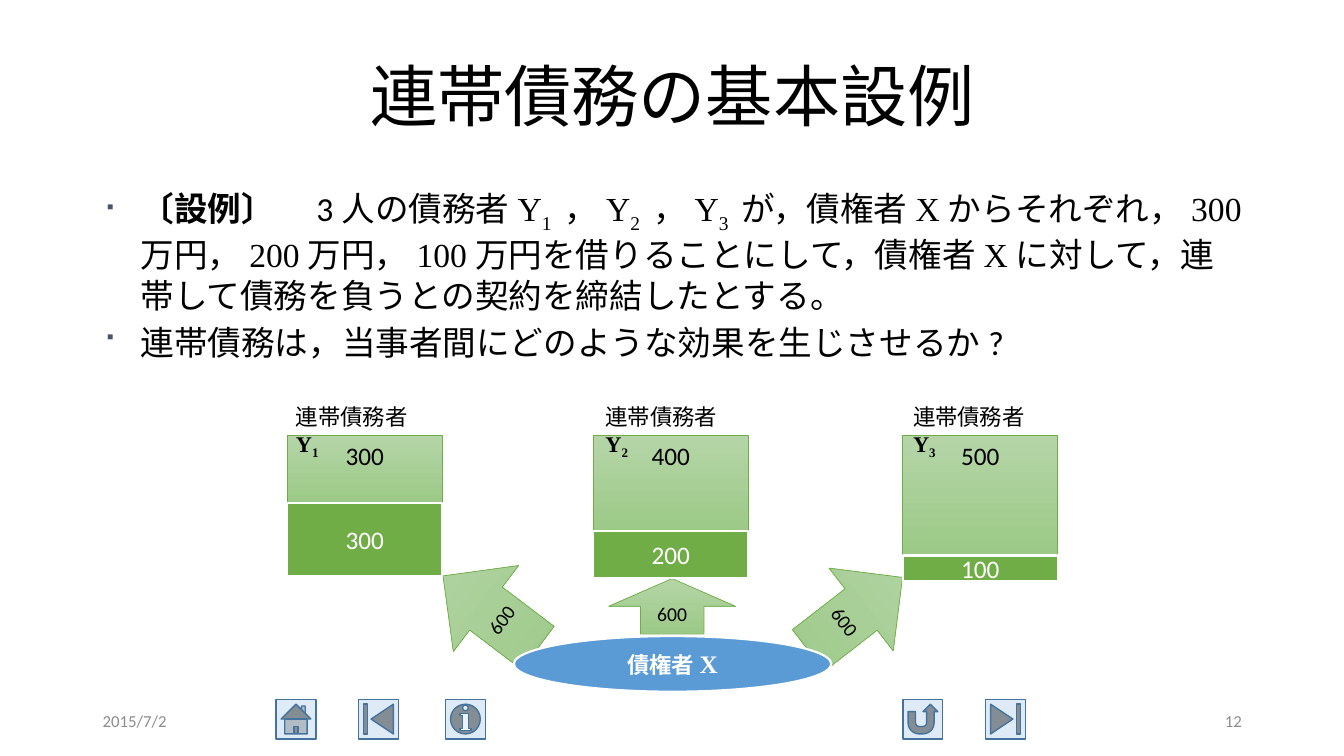
import pptx
import pptx.util
import pptx.dml.color
import pptx.enum.shapes
import pptx.enum.text
import pptx.oxml.ns
from dataclasses import dataclass
from lxml import etree

Cm, Pt = pptx.util.Cm, pptx.util.Pt
KIND = pptx.enum.shapes.MSO_SHAPE
ALIGN = pptx.enum.text.PP_ALIGN
ANCHOR = pptx.enum.text.MSO_ANCHOR
FIT = pptx.enum.text.MSO_AUTO_SIZE


@dataclass(frozen=True)
class Theme:
    sans: str = "Calibri"
    serif: str = "Times New Roman"
    ink: str = "000000"
    white: str = "FFFFFF"
    grey: str = "8C8C8C"
    bullet: str = "44546A"
    green: str = "70AD47"
    fade: tuple = ("B5D5A7", "9CC987")
    blue: str = "5B9BD5"
    button: str = "DEEBF7"
    edge: str = "43739E"
    head: int = 48
    body: int = 24
    bar: int = 18
    label: int = 16
    arrow: int = 14
    foot: int = 12


def rgb(code):
    return pptx.dml.color.RGBColor.from_string(code)


class Deck:
    def __init__(self, theme):
        self.theme = theme
        self.file = pptx.Presentation()
        self.file.slide_width, self.file.slide_height = Cm(33.87), Cm(19.05)
        self.slide = self.file.slides.add_slide(self.file.slide_layouts[5])

    def fill_para(self, para, parts, size, color, align=ALIGN.LEFT):
        """Add (text, marks) parts; marks: t serif, b bold, s subscript, L bar size."""
        para.alignment = align
        for text, marks in parts:
            run = para.add_run()
            run.text = text
            font = run.font
            font.name = self.theme.serif if "t" in marks else self.theme.sans
            font.size = Pt(self.theme.bar if "L" in marks else size)
            font.bold = "b" in marks
            font.color.rgb = rgb(color)
            if "s" in marks:
                run._r.get_or_add_rPr().set("baseline", "-25000")

    def title(self, text, box):
        shape = self.slide.shapes.title
        shape.left, shape.top, shape.width, shape.height = map(Cm, box)
        frame = shape.text_frame
        frame.vertical_anchor = ANCHOR.MIDDLE
        para = frame.paragraphs[0]
        para.line_spacing = 0.9
        self.fill_para(para, [(text, "")], self.theme.head, self.theme.ink, ALIGN.CENTER)

    def text(self, parts, box, size, color, align=ALIGN.LEFT, anchor=ANCHOR.TOP):
        frame = self.slide.shapes.add_textbox(*map(Cm, box)).text_frame
        frame.word_wrap = True
        frame.vertical_anchor = anchor
        if anchor == ANCHOR.TOP:
            frame.auto_size = FIT.SHAPE_TO_FIT_TEXT
        self.fill_para(frame.paragraphs[0], parts, size, color, align)
        return frame

    def bullets(self, items, box):
        theme = self.theme
        frame = self.text(items[0], box, theme.body, theme.ink)
        for item in items[1:]:
            self.fill_para(frame.add_paragraph(), item, theme.body, theme.ink)
        tag = pptx.oxml.ns.qn
        for para in frame.paragraphs:
            para.space_before = Pt(5)
            props = para._p.get_or_add_pPr()
            props.set("marL", str(Cm(0.95)))
            props.set("indent", str(-Cm(0.95)))
            color = etree.SubElement(props, tag("a:buClr"))
            etree.SubElement(color, tag("a:srgbClr")).set("val", theme.bullet)
            etree.SubElement(props, tag("a:buFont")).set("typeface", "Wingdings")
            etree.SubElement(props, tag("a:buChar")).set("char", "■")

    def shape(self, kind, box, fill, line, width, turn=0):
        """Draw a preset shape; a pair of colours as fill fades from top to bottom."""
        shape = self.slide.shapes.add_shape(kind, *map(Cm, box))
        shape.shadow.inherit = False
        shape.rotation = turn
        if isinstance(fill, tuple):
            shape.fill.gradient()
            shape.fill.gradient_angle = 270
            for stop, code, place in zip(shape.fill.gradient_stops, fill, (0, 1)):
                stop.color.rgb = rgb(code)
                stop.position = place
        else:
            shape.fill.solid()
            shape.fill.fore_color.rgb = rgb(fill)
        shape.line.color.rgb = rgb(line)
        shape.line.width = Pt(width)
        return shape

    def block(self, kind, box, parts, size, solid=None, turn=0, anchor=ANCHOR.MIDDLE):
        """Draw a shape with centred text, pale green unless a solid fill is given."""
        theme = self.theme
        look = (solid, theme.white, 1.5) if solid else (theme.fade, theme.green, 0.5)
        frame = self.shape(kind, box, *look, turn).text_frame
        frame.vertical_anchor = anchor
        color = theme.white if solid else theme.ink
        self.fill_para(frame.paragraphs[0], parts, size, color, ALIGN.CENTER)


CASE = [
    [("〔設例〕　", "b"), ("3人の債務者", ""),
     ("Y", "t"), ("1 ", "ts"), ("，Y", "t"), ("2 ", "ts"), ("，Y", "t"), ("3 ", "ts"),
     ("が，債権者", ""), ("X", "t"), ("からそれぞれ，", ""),
     ("300", "t"), ("万円，", ""), ("200", "t"), ("万円，", ""), ("100", "t"),
     ("万円を借りることにして，債権者", ""), ("X", "t"),
     ("に対して，連帯して債務を負うとの契約を締結したとする。", "")],
    [("連帯債務は，当事者間にどのような効果を生じさせるか?", "")],
]
BUTTONS = [
    (KIND.ACTION_BUTTON_HOME, 6.96), (KIND.ACTION_BUTTON_BEGINNING, 9.04),
    (KIND.ACTION_BUTTON_INFORMATION, 11.23), (KIND.ACTION_BUTTON_RETURN, 22.76),
    (KIND.ACTION_BUTTON_END, 24.84),
]
ARROWS = [
    ((20.24, 13.97, 2.64, 3), 52.2),
    ((15.34, 14.58, 3.2, 1.4), 0),
    ((11, 13.92, 2.72, 3), 307.2),
]
# left, label left, own share, its top and height, height of the upper bar
DEBTORS = [
    (7.24, 7.21, 300, 12.67, 1.85, 1.7),
    (14.95, 15.01, 200, 13.39, 1.17, 2.46),
    (22.75, 22.76, 100, 14, 0.64, 3.02),
]
TOTAL = 600
WIDE = 3.91


def main():
    theme = Theme()
    deck = Deck(theme)
    for kind, left in BUTTONS:
        deck.shape(kind, (left, 17.62, 1, 1), theme.button, theme.edge, 1)
    deck.title("連帯債務の基本設例", (2.34, 1.02, 29.21, 2.97))
    for text, left, align in (("2015/7/2", 2.34, ALIGN.LEFT), ("12", 23.93, ALIGN.RIGHT)):
        deck.text([(text, "")], (left, 17.65, 7.62, 1.02), theme.foot, theme.grey,
                  align, ANCHOR.MIDDLE)
    deck.bullets(CASE, (2.34, 4.62, 29.21, 4.57))

    for box, turn in ARROWS:
        deck.block(KIND.UP_ARROW, box, [(str(TOTAL), "")], theme.arrow, turn=turn)
    deck.block(KIND.OVAL, (12.95, 16.03, 8, 1.4), [("債権者", "b"), ("X", "tbL")],
               theme.label, theme.blue)
    for rank, (left, tag, share, top, high, rest) in enumerate(DEBTORS, 1):
        deck.block(KIND.RECTANGLE, (left, 10.97, WIDE, rest), [(str(TOTAL - share), "")],
                   theme.bar, anchor=ANCHOR.TOP)
        deck.text([("連帯債務者", ""), ("Y", "tb"), (str(rank), "tbs")],
                  (tag, 10.03, 3.94, 0.94), theme.label, theme.ink)
        deck.block(KIND.RECTANGLE, (left, top, WIDE, high), [(str(share), "")],
                   theme.bar, theme.green)
    deck.file.save("out.pptx")


if __name__ == "__main__":
    main()
